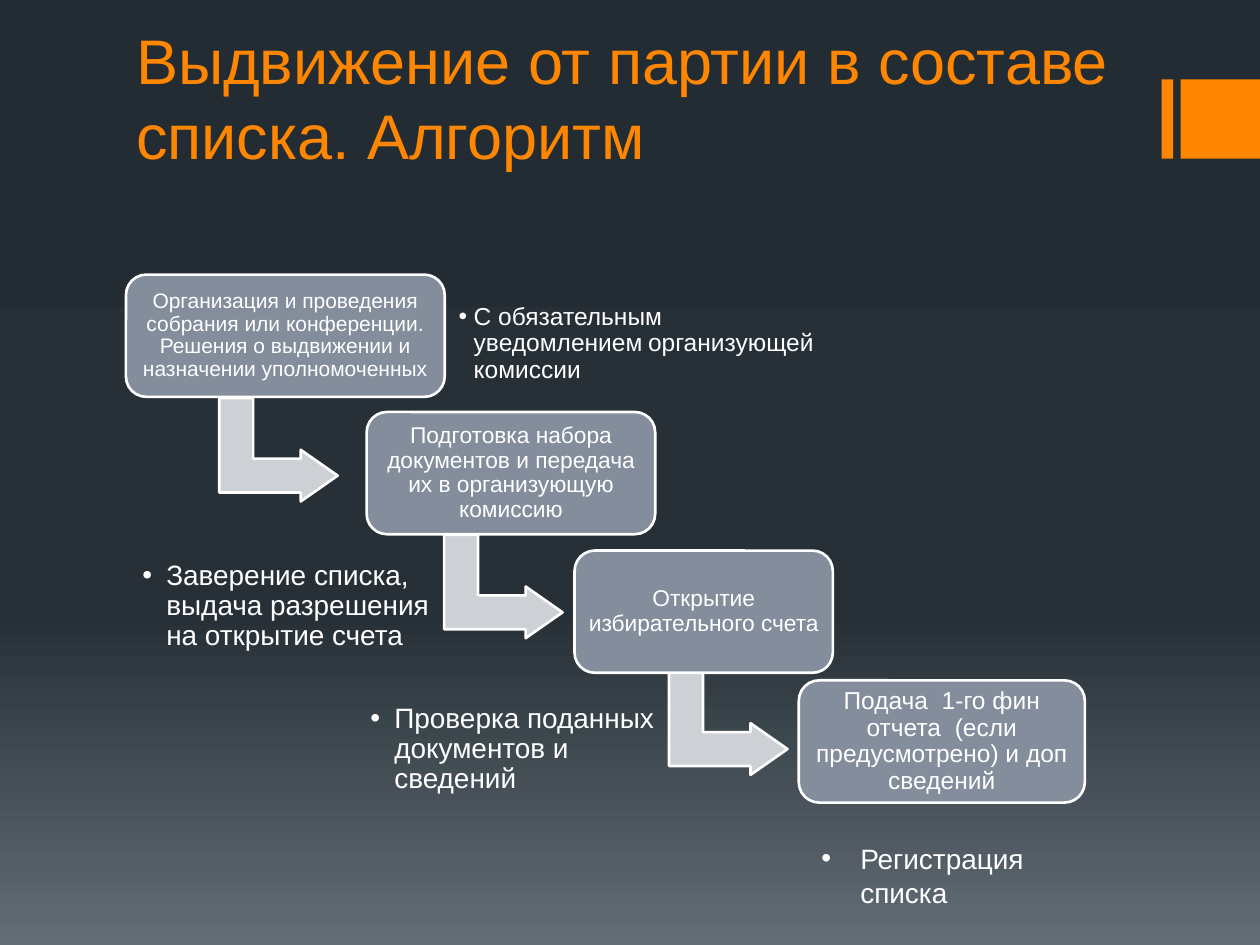
from lxml import etree
from pptx import Presentation
from pptx.dml.color import RGBColor
from pptx.enum.shapes import MSO_SHAPE
from pptx.enum.text import MSO_ANCHOR, PP_ALIGN
from pptx.oxml.ns import qn
from pptx.util import Inches, Pt

RECTANGLE, ROUNDED = MSO_SHAPE.RECTANGLE, MSO_SHAPE.ROUNDED_RECTANGLE
BENT_ARROW = MSO_SHAPE.BENT_UP_ARROW
TOP, MIDDLE, BOTTOM = MSO_ANCHOR.TOP, MSO_ANCHOR.MIDDLE, MSO_ANCHOR.BOTTOM
LEFT, CENTER = PP_ALIGN.LEFT, PP_ALIGN.CENTER

ORANGE = RGBColor(0xFF, 0x86, 0x00)
WHITE = RGBColor(0xFF, 0xFF, 0xFF)
STEP_GREY = RGBColor(0x83, 0x8D, 0x9B)
ARROW_GREY = RGBColor(0xCD, 0xD0, 0xD5)
BACKGROUND = [(0, "242C33"), (65, "273037"), (100, "636D76")]
FONT = "Arial"

# Content
TITLE = "Выдвижение от партии в составе списка. Алгоритм"
# text, size, left, top, width
STEPS = [
    ("Организация и проведения собрания или конференции. Решения о выдвижении "
     "и назначении уполномоченных", 12, 1, 2.18, 2.53),
    ("Подготовка набора документов и передача их в организующую комиссию",
     13, 2.91, 3.27, 2.29),
    ("Открытие избирательного счета", 13, 4.56, 4.37, 2.05),
    ("Подача  1-го фин отчета  (если предусмотрено) и доп сведений",
     14, 6.34, 5.4, 2.27),
]
# spans (text, size), area, inset, bullet indent, line spacing, anchor
NOTES = [
    ([("С обязательным уведомлением", 14), (" ", 11), ("организующей комиссии", 14)],
     (3.58, 2.34, 3.02, 0.78), 0.06, 0.12, 0.9, MIDDLE),
    ([("Заверение списка, выдача разрешения на открытие счета", 16)],
     (1.06, 4.38, 2.69, 0.87), 0.07, 0.19, 0.9, MIDDLE),
    ([("Проверка поданных документов и сведений", 16)],
     (2.87, 5.56, 2.4, 0.78), 0.07, 0.19, 0.9, MIDDLE),
    ([("Регистрация списка", 16)],
     (6.42, 6.58, 1.89, 0.64), 0.1, 0.31, 1.0, TOP),
]

# Grid
STEP_HEIGHT = 0.97
ARROW_START, ARROW_PITCH = (1.8, 3.1), (1.785, 1.085)
ARROW_SIZE = (0.82, 0.94)
ACCENT_TOP, ACCENT_SIDE = 0.63, 0.63


def inches(*values):
    return [Inches(value) for value in values]


def add_shape(page, kind, area, fill, outlined=True):
    shape = page.shapes.add_shape(kind, *inches(*area))
    shape.shadow.inherit = False
    shape.fill.solid()
    shape.fill.fore_color.rgb = fill
    if outlined:
        shape.line.color.rgb = WHITE
        shape.line.width = Pt(1.5)
    else:
        shape.line.fill.background()
    return shape


def set_text(shape, spans, color=WHITE, inset=0.05, anchor=MIDDLE, align=LEFT,
             spacing=1.0):
    frame = shape.text_frame
    margins = dict.fromkeys(("margin_left", "margin_right", "margin_top",
                             "margin_bottom"), Inches(inset))
    for name, value in {"word_wrap": True, "vertical_anchor": anchor, **margins}.items():
        setattr(frame, name, value)
    para = frame.paragraphs[0]
    para.alignment, para.line_spacing = align, spacing
    for text, size in spans:
        span = para.add_run()
        span.text = text
        for name, value in {"name": FONT, "size": Pt(size)}.items():
            setattr(span.font, name, value)
        span.font.color.rgb = color
    return para


def add_bullet(para, indent):
    properties = para._p.get_or_add_pPr()
    properties.set("marL", str(Inches(indent)))
    properties.set("indent", str(-Inches(indent)))
    etree.SubElement(properties, qn("a:buFont")).set("typeface", FONT)
    etree.SubElement(properties, qn("a:buChar")).set("char", "•")


def paint_background(page):
    fill = page.background.fill
    fill.gradient()
    fill.gradient_angle = 270
    stops = page.background._cSld.find(".//" + qn("a:gsLst"))
    for stop in list(stops):
        stops.remove(stop)
    for share, color in BACKGROUND:
        stop = etree.SubElement(stops, qn("a:gs"), pos=str(share * 1000))
        etree.SubElement(stop, qn("a:srgbClr"), val=color)


def main():
    deck = Presentation()
    deck.slide_width, deck.slide_height = inches(10, 7.5)
    page = deck.slides.add_slide(deck.slide_layouts[5])
    paint_background(page)

    # Accent at the right edge
    for left, width in ((9.22, 0.09), (10 - ACCENT_SIDE, ACCENT_SIDE)):
        add_shape(page, RECTANGLE, (left, ACCENT_TOP, width, ACCENT_SIDE), ORANGE, False)

    # Title
    title = page.shapes.title
    title.left, title.top, title.width, title.height = inches(0.98, 0.21, 8, 1.26)
    set_text(title, [(TITLE, 36)], ORANGE, inset=0.1, anchor=BOTTOM)

    # Arrows stepping down between the boxes
    for index in range(len(STEPS) - 1):
        corner = [start + index * pitch for start, pitch in zip(ARROW_START, ARROW_PITCH)]
        arrow = add_shape(page, BENT_ARROW, (*corner, *ARROW_SIZE), ARROW_GREY)
        arrow.rotation = 90
        for number, value in enumerate((0.328, 0.25, 0.358)):
            arrow.adjustments[number] = value

    # Step boxes
    for text, size, left, top, width in STEPS:
        box = add_shape(page, ROUNDED, (left, top, width, STEP_HEIGHT), STEP_GREY)
        set_text(box, [(text, size)], align=CENTER, spacing=0.9)

    # Bulleted notes
    for spans, area, inset, indent, spacing, anchor in NOTES:
        note = page.shapes.add_textbox(*inches(*area))
        para = set_text(note, spans, inset=inset, anchor=anchor, spacing=spacing)
        add_bullet(para, indent)

    deck.save("out.pptx")


if __name__ == "__main__":
    main()
